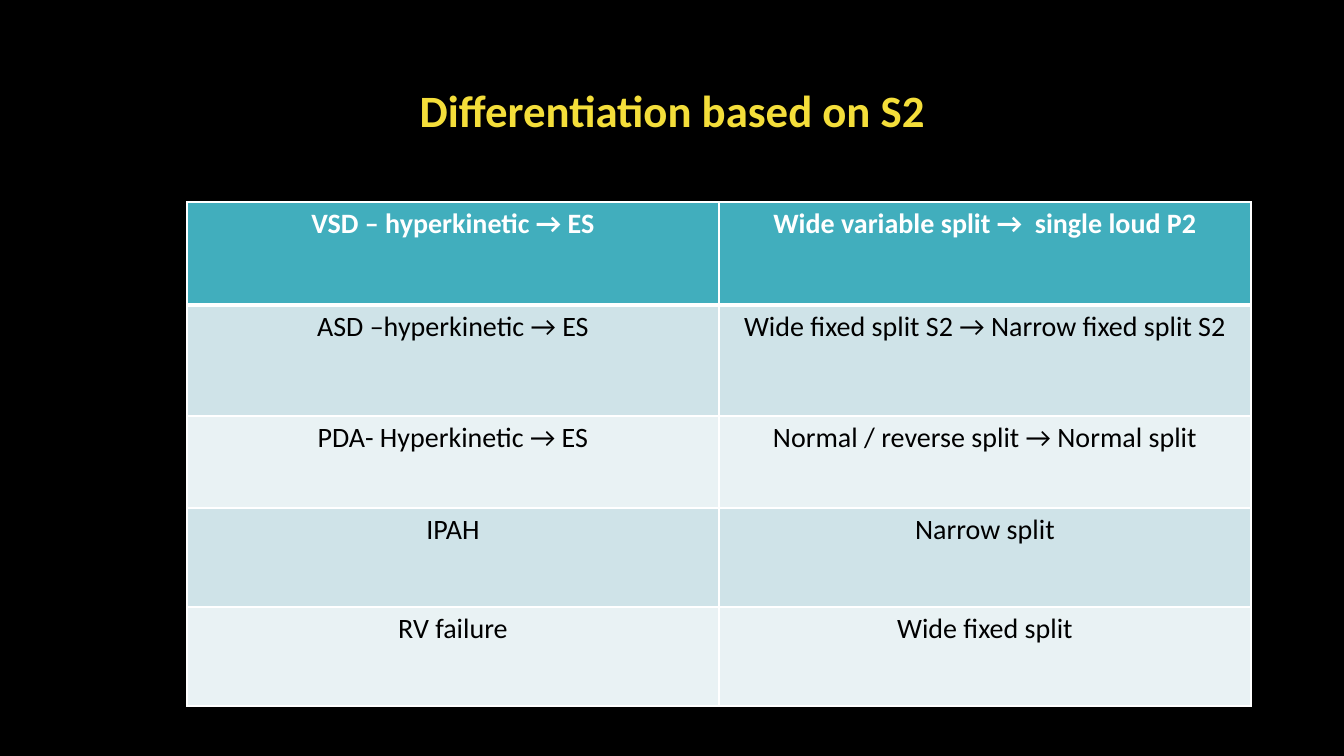
from lxml import etree
from pptx import Presentation
from pptx.dml.color import RGBColor
from pptx.enum.text import MSO_ANCHOR, PP_ALIGN
from pptx.oxml.ns import qn
from pptx.util import Pt

CENTER = PP_ALIGN.CENTER
MIDDLE = MSO_ANCHOR.MIDDLE
TOP = MSO_ANCHOR.TOP
SCALE = 914400 / 100.8  # EMU in one px

HEAD = ("VSD – hyperkinetic → ES", "Wide variable split →  single loud P2")
ROWS = [
    ("ASD –hyperkinetic → ES", "Wide fixed split S2 → Narrow fixed split S2"),
    ("PDA- Hyperkinetic → ES", "Normal / reverse split → Normal split"),
    ("IPAH", "Narrow split"),
    ("RV failure", "Wide fixed split"),
]


def px(n):
    return round(n * SCALE)


def color(code):
    return RGBColor.from_string(code)


class Deck:
    font = "Calibri"
    black, white, yellow = "000000", "FFFFFF", "F4DE3A"
    teal, bands = "41AEBD", ("CFE3E8", "E9F2F4")

    def __init__(self, wide, high):
        self.prs = Presentation()
        self.prs.slide_width, self.prs.slide_height = px(wide), px(high)
        self.slide = self.prs.slides.add_slide(self.prs.slide_layouts[5])
        fill = self.slide.background.fill
        fill.solid()
        fill.fore_color.rgb = color(self.black)

    def label(self, frame, text, size, ink, bold):
        para = frame.paragraphs[0]
        para.alignment = CENTER
        run = para.add_run()
        run.text = text
        font = run.font
        font.name, font.size, font.bold = self.font, Pt(size), bold
        font.color.rgb = color(ink)
        return para

    def title(self, text, left, top, wide, high):
        shape = self.slide.shapes.title
        shape.left, shape.top = px(left), px(top)
        shape.width, shape.height = px(wide), px(high)
        frame = shape.text_frame
        frame.word_wrap = True
        frame.vertical_anchor = MIDDLE
        self.label(frame, text, 32, self.yellow, True).line_spacing = 0.9

    def border(self, cell, side, width):
        props = cell._tc.get_or_add_tcPr()
        line = etree.SubElement(props, qn("a:ln" + side), w=str(Pt(width)))
        fill = etree.SubElement(line, qn("a:solidFill"))
        etree.SubElement(fill, qn("a:srgbClr"), val=self.white)

    def cell(self, cell, text, shade, ink, bold, edges):
        for side, width in edges.items():
            self.border(cell, side, width)
        cell.fill.solid()
        cell.fill.fore_color.rgb = color(shade)
        cell.vertical_anchor = TOP
        self.label(cell.text_frame, text, 20, ink, bold)

    def table(self, head, rows, left, top, wide, highs):
        frame = self.slide.shapes.add_table(
            len(highs), len(head), px(left), px(top), px(wide), px(sum(highs)))
        grid = frame.table
        for col in grid.columns:
            col.width = px(wide / len(head))
        for r, (texts, high) in enumerate(zip([head] + rows, highs)):
            grid.rows[r].height = px(high)
            first = r == 0
            shade = self.teal if first else self.bands[(r - 1) % 2]
            ink = self.white if first else self.black
            # A thick rule parts the header from the body
            edges = {"L": 1, "R": 1, "T": 3 if r == 1 else 1, "B": 3 if first else 1}
            for c, text in enumerate(texts):
                self.cell(grid.cell(r, c), text, shade, ink, first, edges)


def main():
    deck = Deck(1344, 756)
    # Heading
    deck.title("Differentiation based on S2", 93, 40, 1159, 146)
    # Findings by lesion
    deck.table(HEAD, ROWS, 187, 202, 1064, (103, 111, 92, 99, 99))
    deck.prs.save("out.pptx")


if __name__ == "__main__":
    main()
